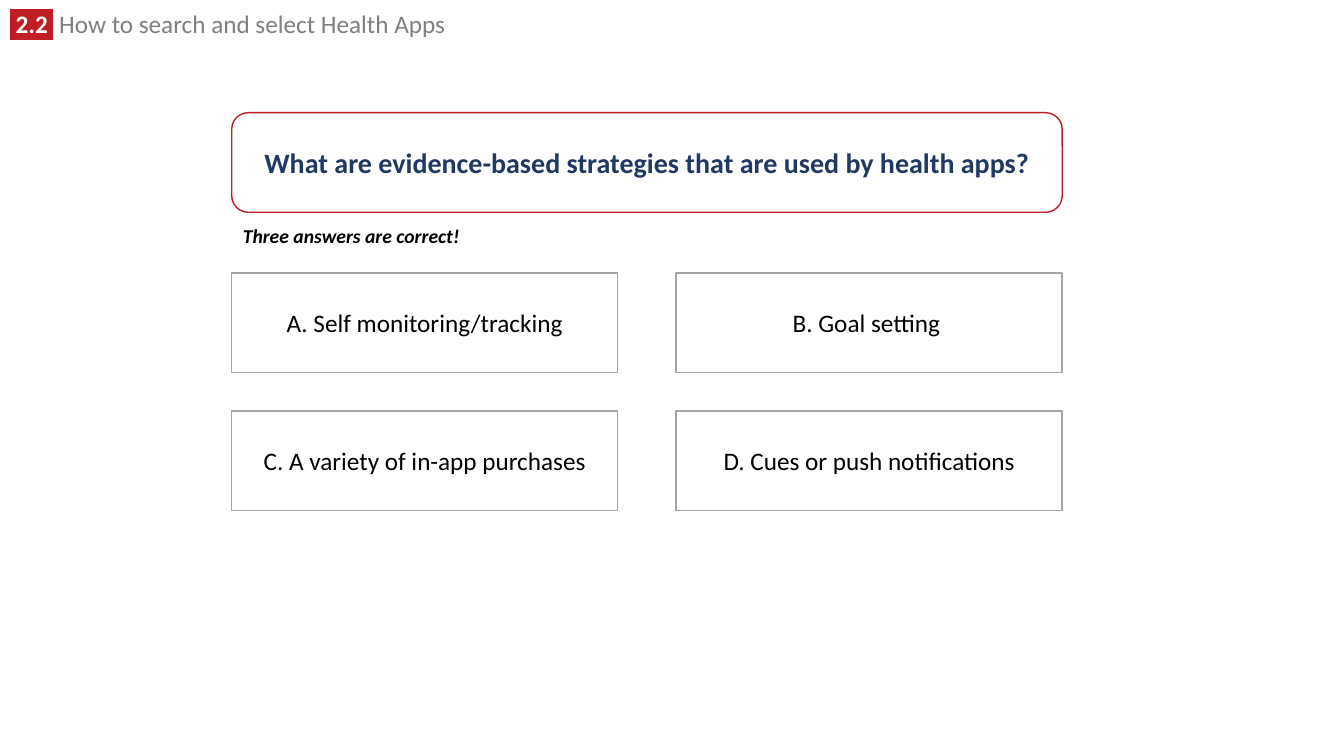
from dataclasses import dataclass

from lxml.etree import SubElement
from pptx import Presentation
from pptx.dml.color import RGBColor
from pptx.enum.shapes import MSO_SHAPE as Shape
from pptx.enum.text import MSO_ANCHOR as Anchor, MSO_AUTO_SIZE as Fit, PP_ALIGN as Align
from pptx.oxml.ns import qn
from pptx.slide import Slide
from pptx.text.text import _Paragraph as Para, _Run as Run
from pptx.util import Cm, Pt

WHITE = RGBColor(0xFF, 0xFF, 0xFF)
BLACK = RGBColor(0, 0, 0)
RED = RGBColor(0xC0, 0x1E, 0x24)
NAVY = RGBColor(0x20, 0x38, 0x64)
GREY = RGBColor(0x80, 0x80, 0x80)
SILVER = RGBColor(0xA5, 0xA5, 0xA5)

LEFT, HIGH = 5.84, 2.51
WIDE = 20.93
GRID_TOP, CELL = 6.88, 9.73
STEP_X, STEP_Y = 11.2, 3.48
ANSWERS = [
    "A. Self monitoring/tracking",
    "B. Goal setting ",
    "C. A variety of in-app purchases",
    "D. Cues or push notifications",
]


@dataclass
class Card:
    text: str
    left: float
    top: float
    width: float
    kind: Shape = Shape.RECTANGLE
    edge: RGBColor = SILVER
    ink: RGBColor = BLACK
    size: int = 18
    bold: bool = False


def add_run(para: Para, text: str, size: int, ink: RGBColor,
            bold: bool = False, slant: bool = False) -> Run:
    run = para.add_run()
    run.text = text
    font = run.font
    font.name, font.size = "Calibri", Pt(size)
    font.bold, font.italic = bold, slant
    font.color.rgb = ink
    return run


def mark(run: Run, color: RGBColor) -> None:
    """Put a highlight colour behind a run."""
    props = run.font._element
    light = SubElement(props, qn("a:highlight"))
    SubElement(light, qn("a:srgbClr")).set("val", str(color))
    props.find(qn("a:solidFill")).addnext(light)


def add_card(slide: Slide, card: Card) -> None:
    box = slide.shapes.add_shape(
        card.kind, Cm(card.left), Cm(card.top), Cm(card.width), Cm(HIGH))
    box.shadow.inherit = False
    box.fill.solid()
    box.fill.fore_color.rgb = WHITE
    box.line.color.rgb = card.edge
    box.line.width = Pt(1)
    frame = box.text_frame
    frame.word_wrap = True
    frame.vertical_anchor = Anchor.MIDDLE
    para = frame.paragraphs[0]
    para.alignment = Align.CENTER
    add_run(para, card.text, card.size, card.ink, card.bold)


def add_label(slide: Slide, left: float, top: float, width: float,
              height: float, wrap: bool) -> Para:
    box = slide.shapes.add_textbox(Cm(left), Cm(top), Cm(width), Cm(height))
    frame = box.text_frame
    frame.word_wrap = wrap
    frame.auto_size = Fit.SHAPE_TO_FIT_TEXT
    return frame.paragraphs[0]


def main() -> None:
    deck = Presentation()
    deck.slide_width, deck.slide_height = Cm(33.87), Cm(19.05)
    slide = deck.slides.add_slide(deck.slide_layouts[6])

    title = add_label(slide, 0, 0.23, 24.18, 0.89, True)
    title.line_spacing = 0.8
    mark(add_run(title, " 2.2 ", 18, WHITE, bold=True), RED)
    add_run(title, " How to search and select Health Apps", 18, GREY)

    add_card(slide, Card(
        "What are evidence-based strategies that are used by health apps?",
        LEFT, 2.84, WIDE, Shape.ROUNDED_RECTANGLE, RED, NAVY, 20, True))

    hint = add_label(slide, 5.87, 5.51, 5.99, 0.86, False)
    add_run(hint, "Three answers are correct!", 14, BLACK, bold=True, slant=True)

    for i, text in enumerate(ANSWERS):
        row, col = divmod(i, 2)
        add_card(slide, Card(
            text, LEFT + col * STEP_X, GRID_TOP + row * STEP_Y, CELL))

    deck.save("out.pptx")


if __name__ == "__main__":
    main()
